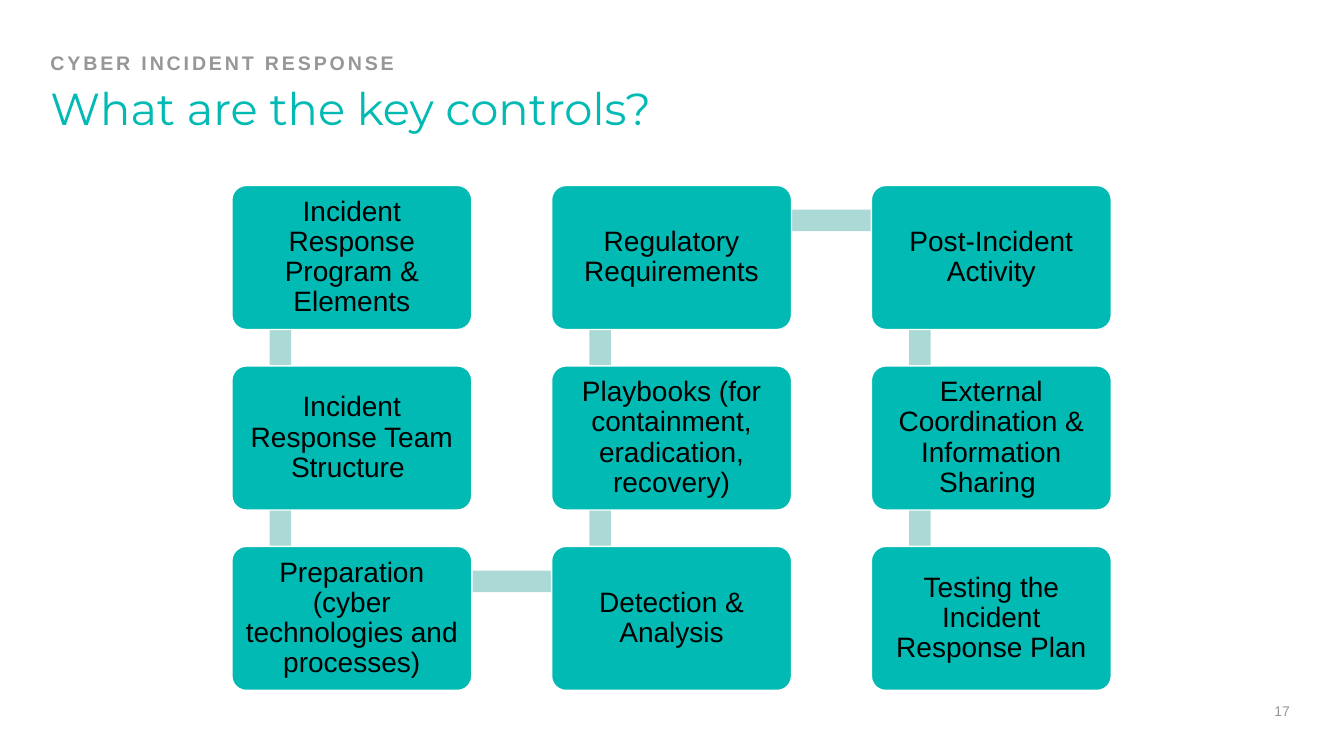
from pptx import Presentation
from pptx.dml.color import RGBColor
from pptx.enum.shapes import MSO_SHAPE
from pptx.enum.text import MSO_ANCHOR, PP_ALIGN
from pptx.util import Pt

TEAL = RGBColor(0x00, 0xBA, 0xB3)
PALE_TEAL = RGBColor(0xAB, 0xD9, 0xD6)
GREY = RGBColor(0x97, 0x97, 0x97)
BLACK = RGBColor(0, 0, 0)
WHITE = RGBColor(0xFF, 0xFF, 0xFF)

# Controls in reading order along the path, as (column, row, label)
CONTROLS = [
    (0, 0, "Incident Response Program & Elements"),
    (0, 1, "Incident Response Team Structure "),
    (0, 2, "Preparation (cyber technologies and processes)"),
    (1, 2, "Detection & Analysis"),
    (1, 1, "Playbooks (for containment, eradication, recovery)"),
    (1, 0, "Regulatory Requirements"),
    (2, 0, "Post-Incident Activity"),
    (2, 1, "External Coordination & Information Sharing "),
    (2, 2, "Testing the Incident Response Plan"),
]


def write(frame, text, size, color, font="Arial", bold=False, align=PP_ALIGN.LEFT,
          anchor=MSO_ANCHOR.MIDDLE, insets=(0, 0, 0, 0), line_spacing=0.9):
    frame.word_wrap = True
    frame.vertical_anchor = anchor
    (frame.margin_left, frame.margin_top,
     frame.margin_right, frame.margin_bottom) = map(Pt, insets)
    paragraph = frame.paragraphs[0]
    paragraph.alignment = align
    paragraph.line_spacing = line_spacing
    run = paragraph.add_run()
    run.text = text
    run.font.name = font
    run.font.size = Pt(size)
    run.font.bold = bold
    run.font.color.rgb = color
    return run


def add_block(slide, preset, left, top, width, height, color):
    block = slide.shapes.add_shape(preset, Pt(left), Pt(top), Pt(width), Pt(height))
    block.shadow.inherit = False
    block.fill.solid()
    block.fill.fore_color.rgb = color
    block.line.fill.background()
    return block


def add_heading(slide, left, top, width):
    # Section label
    section = slide.shapes.add_textbox(Pt(left), Pt(top), Pt(width), Pt(15.1))
    label = write(section.text_frame, "CYBER INCIDENT RESPONSE", 14, GREY, bold=True,
                  anchor=MSO_ANCHOR.BOTTOM)
    label.font._element.set("spc", "200")
    # Title
    title = slide.shapes.add_textbox(Pt(left), Pt(top + 16.6), Pt(width), Pt(42.5))
    write(title.text_frame, "What are the key controls?", 32, TEAL, font="Montserrat",
          anchor=MSO_ANCHOR.TOP, insets=(0, 7.2, 0, 0))


def add_controls_path(slide, left, top, width, height):
    card_width, card_height = 171.4, 102.9
    column_step = (width - card_width) / 2
    row_step = (height - card_height) / 2
    bar = 15.4
    bar_x, bar_y = 27, 17.2  # where a bar starts inside its card

    corners = [(left + column * column_step, top + row * row_step)
               for column, row, _ in CONTROLS]

    # Bars from each card to the next, behind the cards
    for (x1, y1), (x2, y2) in zip(corners, corners[1:]):
        add_block(slide, MSO_SHAPE.RECTANGLE, min(x1, x2) + bar_x, min(y1, y2) + bar_y,
                  abs(x2 - x1) + bar, abs(y2 - y1) + bar, PALE_TEAL)

    # Cards
    for (x, y), (_, _, control) in zip(corners, CONTROLS):
        card = add_block(slide, MSO_SHAPE.ROUNDED_RECTANGLE, x, y,
                         card_width, card_height, TEAL)
        card.adjustments[0] = 0.1
        card.line.color.rgb = WHITE
        card.line.width = Pt(1)
        write(card.text_frame, control, 20, BLACK, align=PP_ALIGN.CENTER,
              insets=(5.7, 5.7, 5.7, 5.7))


def add_page_number(slide, left, top, width, height):
    page = slide.shapes.add_textbox(Pt(left), Pt(top), Pt(width), Pt(height))
    write(page.text_frame, "17", 10, GREY, align=PP_ALIGN.CENTER, line_spacing=1.0)


def main():
    deck = Presentation()
    deck.slide_width, deck.slide_height = Pt(960), Pt(540)
    slide = deck.slides.add_slide(deck.slide_layouts[6])
    add_heading(slide, 36, 38.2, 888)
    add_controls_path(slide, 165.6, 132.5, 628.2, 360.7)
    add_page_number(slide, 901.4, 501.8, 28.8, 12.2)
    deck.save("out.pptx")


if __name__ == "__main__":
    main()
